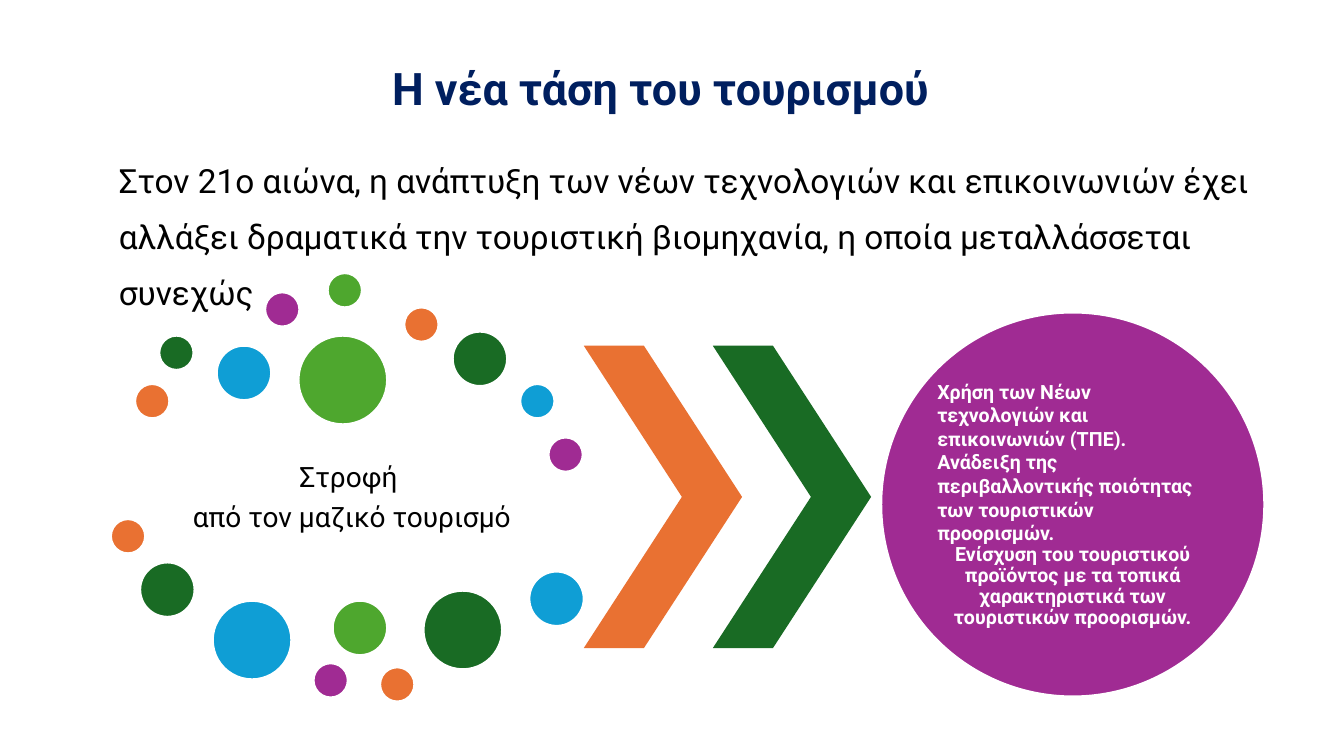
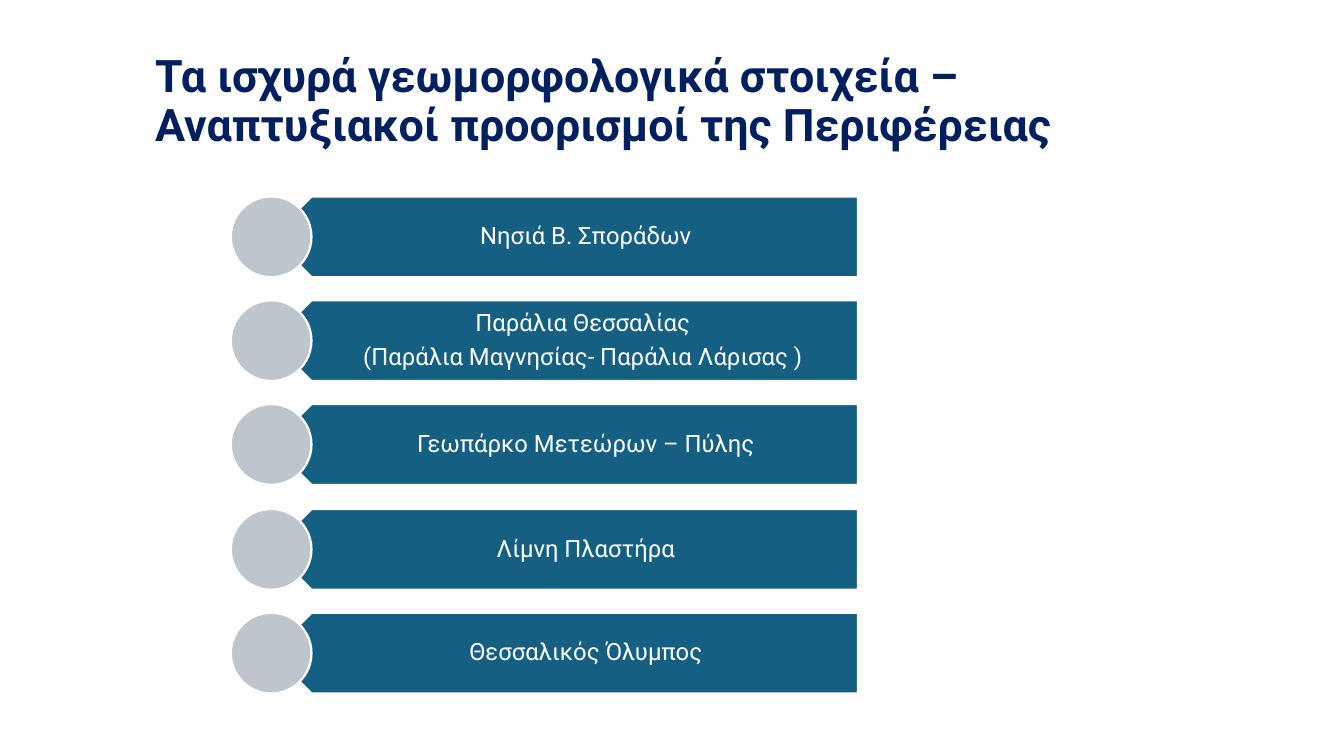
import pptx
import pptx.util
import pptx.dml.color
import pptx.enum.shapes
import pptx.enum.text

SHAPE = pptx.enum.shapes.MSO_SHAPE
ALIGN = pptx.enum.text.PP_ALIGN
ANCHOR = pptx.enum.text.MSO_ANCHOR
PX = 9144  # EMU in one px, 100 px to the inch


class Theme:
    font = "Roboto"
    navy, black, white = "001F5F", "000000", "FFFFFF"
    orange, green, blue = "E97132", "196B24", "0F9ED5"
    purple, lime = "A02B93", "4EA72E"
    teal, grey = "156082", "BDC5CD"
    title_size, body_size, label_size = 32, 23.8, 20
    bar_size, circle_size = 17, 14
    outline = 1.5
    tight = 0.9


# Dots around the label: left, top, diameter (relative to the cluster), colour
DOTS = [
    (24, 110, 34, Theme.orange), (48, 62, 34, Theme.green),
    (105, 72, 54, Theme.blue), (153, 19, 34, Theme.purple),
    (215, 0, 34, Theme.lime), (291, 34, 34, Theme.orange),
    (339, 58, 54, Theme.green), (406, 110, 34, Theme.blue),
    (434, 163, 34, Theme.purple), (186, 62, 88, Theme.lime),
    (0, 244, 34, Theme.orange), (29, 287, 54, Theme.green),
    (101, 325, 78, Theme.blue), (201, 387, 34, Theme.purple),
    (220, 325, 54, Theme.lime), (267, 391, 34, Theme.orange),
    (310, 315, 78, Theme.green), (415, 296, 54, Theme.blue),
]

DESTINATIONS = [
    "Νησιά Β. Σποράδων",
    "Παράλια Θεσσαλίας \n(Παράλια Μαγνησίας- Παράλια Λάρισας ) ",
    "Γεωπάρκο Μετεώρων – Πύλης",
    "Λίμνη Πλαστήρα",
    "Θεσσαλικός Όλυμπος",
]


def colour(value):
    return pptx.dml.color.RGBColor.from_string(value)


def emu(*lengths):
    return [pptx.util.Emu(length * PX) for length in lengths]


def write(shape, text, size, ink, bold=False, align=ALIGN.LEFT,
          spacing=Theme.tight, after=0, anchor=ANCHOR.MIDDLE,
          margins=(10, 5, 10, 5)):
    """Fill a shape with text in one style; margins run left, top, right, bottom."""
    frame = shape.text_frame
    frame.word_wrap = True
    frame.vertical_anchor = anchor
    (frame.margin_left, frame.margin_top,
     frame.margin_right, frame.margin_bottom) = emu(*margins)
    frame.text = text
    for para in frame.paragraphs:
        para.alignment = align
        para.line_spacing = spacing
        para.space_after = pptx.util.Pt(after)
        for span in para.runs:
            span.font.name = Theme.font
            span.font.size = pptx.util.Pt(size)
            span.font.bold = bold
            span.font.color.rgb = colour(ink)
    return frame


def add_text(page, box, text, size, ink, **style):
    return write(page.shapes.add_textbox(*emu(*box)), text, size, ink, **style)


def add_shape(page, kind, box, fill, outlined=True):
    shape = page.shapes.add_shape(kind, *emu(*box))
    shape.shadow.inherit = False
    shape.fill.solid()
    shape.fill.fore_color.rgb = colour(fill)
    if outlined:
        shape.line.color.rgb = colour(Theme.white)
        shape.line.width = pptx.util.Pt(Theme.outline)
    else:
        shape.line.fill.background()
    return shape


def add_title(page, box, text):
    add_text(page, box, text, Theme.title_size, Theme.navy, bold=True)


def add_dot_cluster(page, box, label):
    left, top, width, height = box
    add_text(page, (left + 55, top + 153, width - 101, 141), label,
             Theme.label_size, Theme.black, align=ALIGN.CENTER, after=7,
             margins=(3, 3, 3, 3))
    for x, y, size, fill in DOTS:
        add_shape(page, SHAPE.OVAL, (left + x, top + y, size, size), fill)


def add_chevrons(page, box, fills):
    left, top, width, height = box
    chevron_width = 157
    step = (width - chevron_width) // (len(fills) - 1)
    for index, fill in enumerate(fills):
        chevron = add_shape(page, SHAPE.CHEVRON,
                            (left + index * step, top, chevron_width, height),
                            fill, outlined=False)
        chevron.adjustments[0] = 0.62


def add_goal_circle(page, box, text):
    circle = add_shape(page, SHAPE.OVAL, box, Theme.purple)
    frame = write(circle, text, Theme.circle_size, Theme.white, bold=True,
                  spacing=1.0, margins=(0, 0, 0, 0))
    # The closing goal is centred and set tighter
    closing = frame.paragraphs[-1]
    closing.alignment = ALIGN.CENTER
    closing.line_spacing = Theme.tight


def add_destination_bars(page, box, names):
    left, top, width, height = box
    bar = 80
    radius = bar // 2
    for index, name in enumerate(names):
        y = top + round(index * (height - bar) / (len(names) - 1))
        plate = add_shape(page, SHAPE.PENTAGON,
                          (left + radius, y, width - radius, bar), Theme.teal)
        plate.rotation = 180
        add_text(page, (left + 60, y, width - 60, bar), name,
                 Theme.bar_size, Theme.white, align=ALIGN.CENTER, after=6,
                 margins=(35, 7, 13, 7))
        add_shape(page, SHAPE.OVAL, (left, y, bar, bar), Theme.grey)


def build_trend_page(page):
    add_title(page, (379, 42, 942, 96), "Η νέα τάση του τουρισμού")
    add_text(page, (108, 138, 1183, 121),
             "Στον 21ο αιώνα, η ανάπτυξη των νέων τεχνολογιών και επικοινωνιών "
             "έχει αλλάξει δραματικά την τουριστική βιομηχανία, η οποία "
             "μεταλλάσσεται συνεχώς",
             Theme.body_size, Theme.black, spacing=1.4, anchor=ANCHOR.TOP)
    add_dot_cluster(page, (110, 271, 469, 425),
                    "Στροφή \nαπό τον μαζικό τουρισμό")
    add_chevrons(page, (579, 343, 285, 300), [Theme.orange, Theme.green])
    add_goal_circle(
        page, (874, 310, 380, 381),
        "Χρήση των Νέων τεχνολογιών και επικοινωνιών (ΤΠΕ). \n"
        "Ανάδειξη της περιβαλλοντικής ποιότητας των τουριστικών προορισμών.\n"
        "Ενίσχυση του τουριστικού προϊόντος με τα τοπικά χαρακτηριστικά "
        "των τουριστικών προορισμών.")


def build_destinations_page(page):
    add_title(page, (144, 29, 1150, 145),
              "Τα ισχυρά γεωμορφολογικά στοιχεία – \v"
              "Αναπτυξιακοί προορισμοί της Περιφέρειας")
    add_destination_bars(page, (229, 195, 622, 493), DESTINATIONS)


def main():
    deck = pptx.Presentation()
    deck.slide_width, deck.slide_height = emu(1333, 750)
    blank = deck.slide_layouts[6]
    for build in (build_trend_page, build_destinations_page):
        build(deck.slides.add_slide(blank))
    deck.save("out.pptx")


if __name__ == "__main__":
    main()
